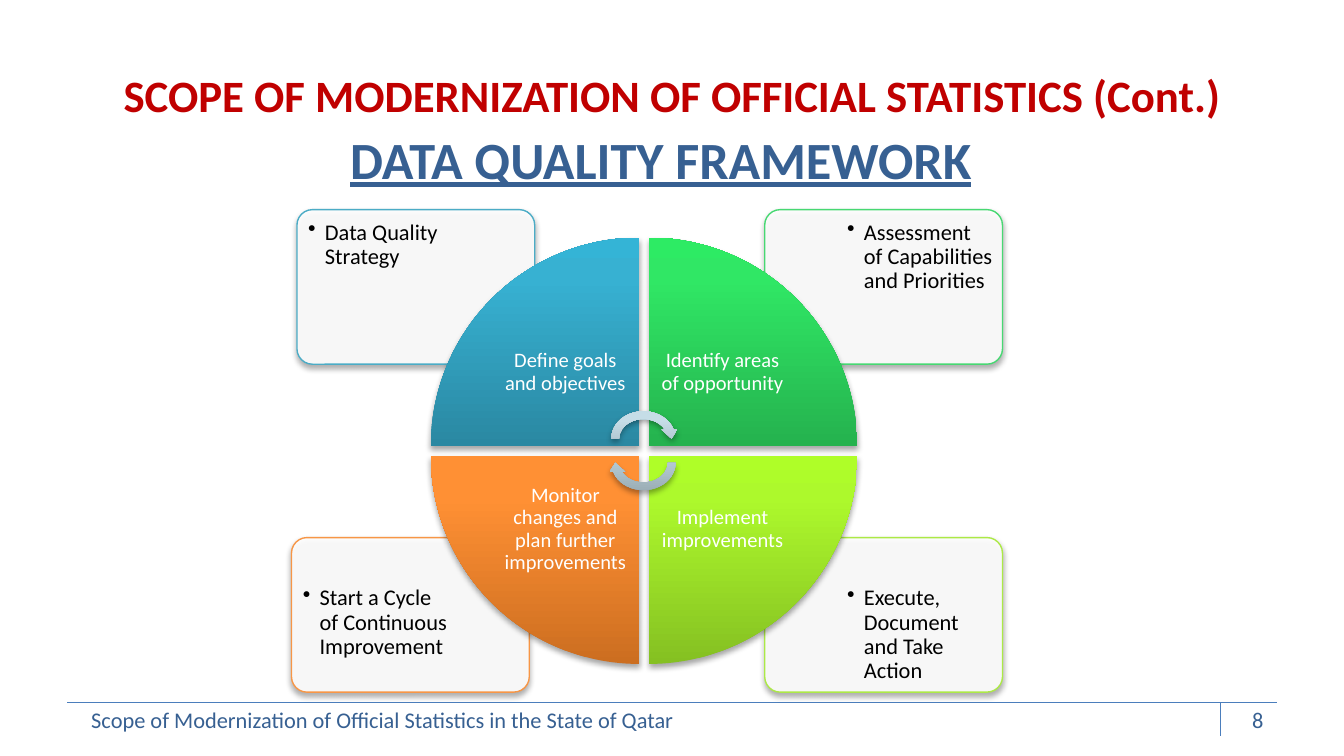
"""Build the data quality framework slide with its four-step cycle."""
from lxml.etree import SubElement
from pptx import Presentation
from pptx.dml.color import RGBColor
from pptx.enum.shapes import MSO_CONNECTOR as CONNECTOR, MSO_SHAPE as SHAPE
from pptx.enum.text import MSO_ANCHOR as ANCHOR, PP_ALIGN as ALIGN
from pptx.oxml import parse_xml
from pptx.oxml.ns import nsdecls, qn
from pptx.util import Pt

COLORS = {
    "navy": "376092", "red": "C00000", "rule": "4B7EBC", "white": "FFFFFF", "black": "000000",
    "blue line": "4BACC6", "green line": "47D872", "lime line": "ACE946", "orange line": "F79646",
}
GRADIENTS = {
    "blue": ("2A88A2", "37B1D2", "34B4D6"),
    "green": ("25B24E", "30E765", "2DEB64"),
    "lime": ("85C022", "ADF92C", "AFFE28"),
    "orange": ("CC6E20", "FF9034", "FF9136"),
    "arrow": ("98AAB2", "C5DDE7", "C6DEE9"),
}


def add_text(box, text, color, font, frame=None, layout=None):
    """Add a text box with one formatted paragraph and return the paragraph."""
    text_frame = slide.shapes.add_textbox(*map(Pt, box)).text_frame
    paragraph = text_frame.paragraphs[0]
    run = paragraph.add_run()
    run.text = text
    run.font.color.rgb = RGBColor.from_string(COLORS[color])
    formats = (
        (text_frame, {"word_wrap": True, **(frame or {})}),
        (paragraph, layout or {}),
        (run.font, {"name": "Calibri", **font}),
    )
    for target, values in formats:
        for name, value in values.items():
            setattr(target, name, value)
    return paragraph


def add_shadowed(kind, box, rotation=0, gradient=None):
    """Add a shape with a soft shadow and an optional upright gradient."""
    shape = slide.shapes.add_shape(kind, *map(Pt, box))
    shape.rotation = rotation
    shape.shadow.inherit = False
    properties = shape._element.spPr
    if gradient:
        shape.line.fill.background()
        stops = "".join(
            f'<a:gs pos="{position}"><a:srgbClr val="{color}"/></a:gs>'
            for position, color in zip((0, 80000, 100000), GRADIENTS[gradient])
        )
        properties.find(qn("a:prstGeom")).addnext(parse_xml(
            f'<a:gradFill {nsdecls("a")} rotWithShape="0"><a:gsLst>{stops}</a:gsLst>'
            '<a:lin ang="16200000" scaled="0"/></a:gradFill>'
        ))
    properties.find(qn("a:effectLst")).append(parse_xml(
        f'<a:outerShdw {nsdecls("a")} blurRad="40000" dist="23000" dir="5400000" '
        'rotWithShape="0"><a:srgbClr val="000000"><a:alpha val="35000"/></a:srgbClr></a:outerShdw>'
    ))
    return shape


presentation = Presentation()
presentation.slide_width, presentation.slide_height = Pt(720), Pt(405)
slide = presentation.slides.add_slide(presentation.slide_layouts[6])

footer_font = {"size": Pt(12)}
add_text((41.8, 375, 396, 36), "Scope of Modernization of Official Statistics in the State of Qatar",
         "navy", footer_font)
add_text((516, 375, 168, 21.6), "8", "navy", footer_font, layout={"alignment": ALIGN.RIGHT})
for ends in ((36, 376.5, 684, 376.5), (654, 376.5, 654, 394.5)):
    rule = slide.shapes.add_connector(CONNECTOR.STRAIGHT, *map(Pt, ends))
    rule.line.color.rgb = RGBColor.from_string(COLORS["rule"])
    rule.line.width = Pt(0.75)
    SubElement(rule._element.spPr, qn("a:effectLst"))

middle, centered = {"vertical_anchor": ANCHOR.MIDDLE}, {"alignment": ALIGN.CENTER}
add_text((30, 51, 648, 67.7), "DATA QUALITY FRAMEWORK", "navy",
         {"size": Pt(28), "bold": True, "underline": True}, middle, centered)
add_text((36, 16.6, 648, 67.7), "SCOPE OF MODERNIZATION OF OFFICIAL STATISTICS (Cont.)", "red",
         {"size": Pt(24), "bold": True}, middle, centered)

margins = ("margin_left", "margin_top", "margin_right", "margin_bottom")
card_frame = dict.fromkeys(margins, Pt(3.8))
wedge_frame = {**dict.fromkeys(margins, Pt(6.2)), **middle}
cards = (
    ("lime line", 409.7, 288, 40.3, 22.4, "Execute, Document and Take Action"),
    ("orange line", 156.2, 288, 2.2, 22.4, "Start a Cycle of Continuous Improvement"),
    ("green line", 409.7, 112.3, 40.3, 2.2, "Assessment of Capabilities and Priorities"),
    ("blue line", 159.1, 112.3, 2.2, 2.2, "Data Quality Strategy"),
)
for color, left, top, text_dx, text_dy, text in cards:
    card = add_shadowed(SHAPE.ROUNDED_RECTANGLE, (left, top, 127.4, 82.8))
    card.adjustments[0] = 0.1
    card.fill.solid()
    card.fill.fore_color.rgb = RGBColor.from_string(COLORS["white"])
    fill_color = card._element.spPr.find(qn("a:solidFill")).find(qn("a:srgbClr"))
    SubElement(fill_color, qn("a:alpha"), val="90000")
    card.line.color.rgb = RGBColor.from_string(COLORS[color])
    card.line.width = Pt(0.75)
    paragraph = add_text((left + text_dx, top + text_dy, 85.8, 58.3), text, "black",
                         {"size": Pt(12)}, card_frame, {"line_spacing": 0.9})
    bullet = paragraph._p.get_or_add_pPr()
    bullet.set("marL", str(Pt(9)))
    bullet.set("indent", str(Pt(-9)))
    SubElement(bullet, qn("a:buChar"), char="•")

wedge_size, wedge_step, text_size = 111.6, 116.8, 79
wedges = (
    ("blue", 0, 0, "Define goals and objectives"),
    ("green", 1, 0, "Identify areas of opportunity"),
    ("lime", 1, 1, "Implement improvements"),
    ("orange", 0, 1, "Monitor changes and plan further improvements"),
)
for index, (gradient, column, row, text) in enumerate(wedges):
    left, top = 230.8 + column * wedge_step, 127.3 + row * wedge_step
    add_shadowed(SHAPE.PIE_WEDGE, (left, top, wedge_size, wedge_size), 90 * index, gradient)
    inset = wedge_size - text_size
    add_text((left + inset * (1 - column), top + inset * (1 - row), text_size, text_size), text,
             "white", {"size": Pt(11)}, wedge_frame, {**centered, "line_spacing": 0.9})

for top, rotation in ((218.2, 0), (231.1, 180)):
    add_shadowed(SHAPE.CIRCULAR_ARROW, (325.4, top, 38.6, 33.6), rotation, "arrow")

presentation.save("out.pptx")
